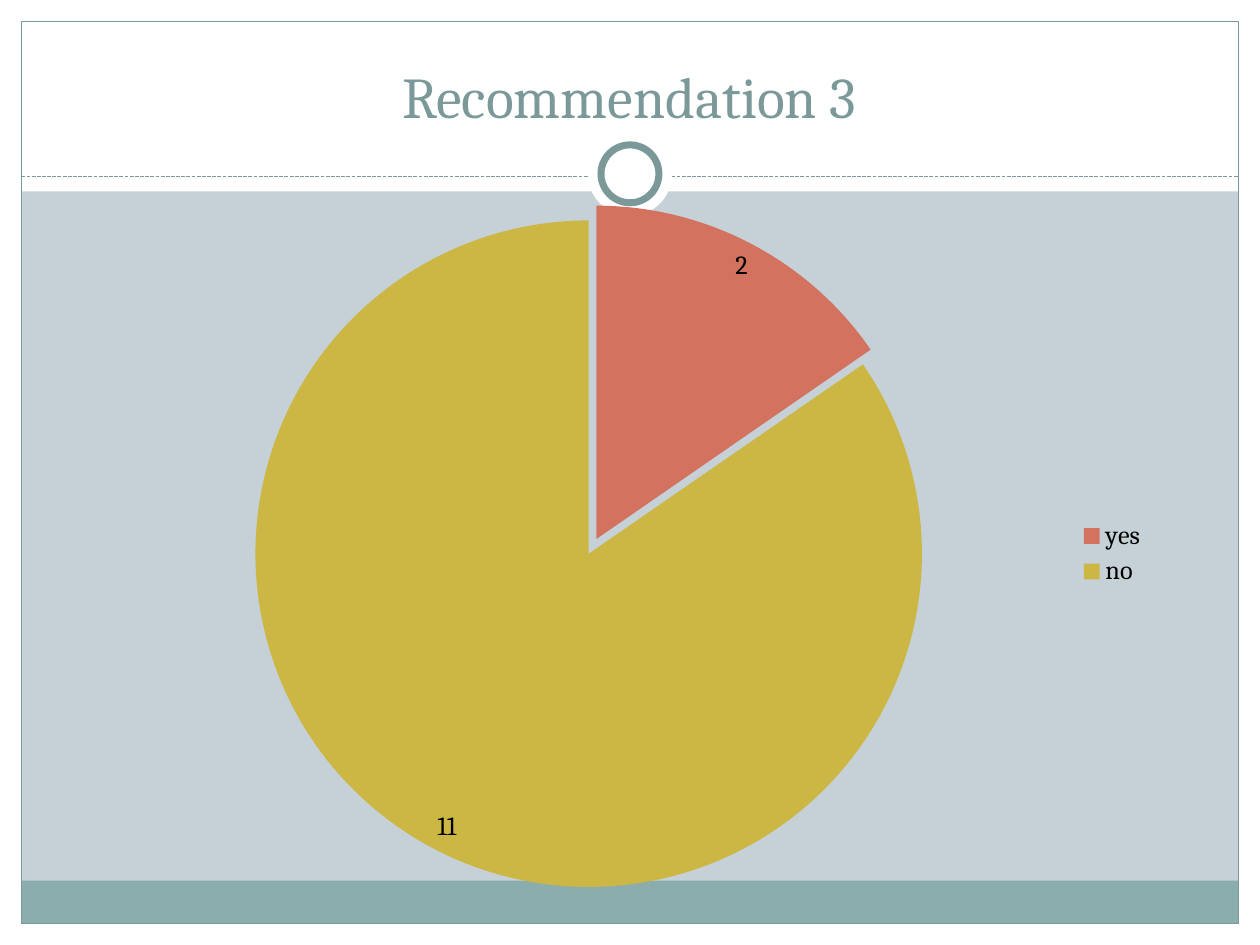
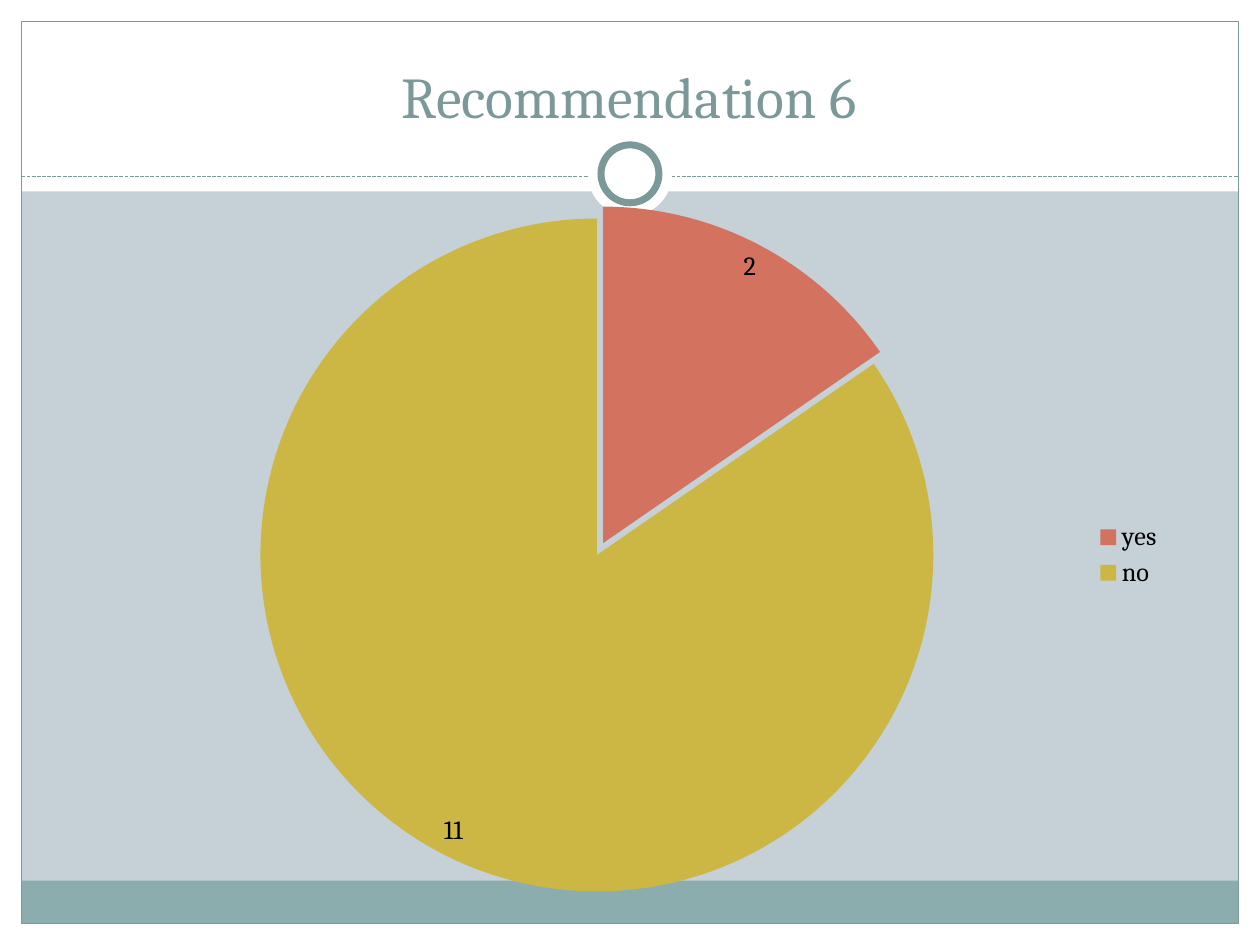
import dataclasses
import typing

import lxml.etree
import pptx
import pptx.chart.data
import pptx.dml.color
import pptx.enum.chart
import pptx.enum.dml
import pptx.enum.shapes
import pptx.enum.text
import pptx.oxml
import pptx.oxml.ns
import pptx.util

RGBColor = pptx.dml.color.RGBColor
Inches = pptx.util.Inches
Shape = pptx.enum.shapes.MSO_SHAPE

# Shared look
WHITE = RGBColor(0xFF, 0xFF, 0xFF)
BLACK = RGBColor(0, 0, 0)
BACKGROUND = RGBColor(0xC5, 0xD1, 0xD7)
TEAL = RGBColor(0x7C, 0x99, 0x9A)
FOOTER_TEAL = RGBColor(0x8C, 0xAD, 0xAE)
SLICE_COLORS = (RGBColor(0xD3, 0x72, 0x5F), RGBColor(0xCC, 0xB7, 0x45))
FONT = "Cambria"

# Page measures in inches
WIDTH, HEIGHT = 10, 7.5
MARGIN = 0.17
HEADER_HEIGHT = 1.52
FOOTER_HEIGHT = 0.34
RULE_Y = 1.4
RING_CENTER_Y = 1.38
INNER_WIDTH = WIDTH - 2 * MARGIN
INNER_HEIGHT = HEIGHT - 2 * MARGIN


@dataclasses.dataclass(frozen=True)
class Box:
    left: float
    top: float
    width: float
    height: float

    def lengths(self) -> tuple:
        return tuple(Inches(value) for value in (self.left, self.top, self.width, self.height))


@dataclasses.dataclass(frozen=True)
class FramePart:
    box: Box
    fill: typing.Optional[RGBColor] = WHITE
    line_width: float = 0
    kind: Shape = Shape.RECTANGLE


@dataclasses.dataclass(frozen=True)
class PieSlide:
    title: str
    chart_box: Box
    explosion: int


def ring_box(diameter: float) -> Box:
    """Square centred on the page, at the height of the ring."""
    return Box((WIDTH - diameter) / 2, RING_CENTER_Y - diameter / 2, diameter, diameter)


TITLE_BOX = Box(0.33, 0.25, 9.33, 0.83)
BANDS = (
    FramePart(Box(0, HEIGHT - MARGIN, WIDTH, MARGIN)),
    FramePart(Box(0, 0, WIDTH, HEADER_HEIGHT)),
    FramePart(Box(0, 0, MARGIN, HEIGHT)),
    FramePart(Box(WIDTH - MARGIN, 0, MARGIN, HEIGHT)),
    FramePart(Box(MARGIN, HEIGHT - MARGIN - FOOTER_HEIGHT, INNER_WIDTH, FOOTER_HEIGHT), FOOTER_TEAL),
    FramePart(Box(MARGIN, MARGIN, INNER_WIDTH, INNER_HEIGHT), None, 0.75),
)
RING = (
    FramePart(ring_box(0.67), kind=Shape.OVAL),
    FramePart(ring_box(0.46), line_width=4, kind=Shape.OVAL),
)

CATEGORIES = ("yes", "no")
VOTES = (2, 11)
PIE_SLIDES = (
    PieSlide("Recommendation 3", Box(0.81, 1.48, 8.39, 5.83), 5),
    PieSlide("Recommendation 6", Box(0.81, 1.49, 8.52, 5.83), 4),
)


def add_part(slide, part: FramePart) -> None:
    shape = slide.shapes.add_shape(part.kind, *part.box.lengths())
    shape.shadow.inherit = False
    if part.fill is None:
        shape.fill.background()
    else:
        shape.fill.solid()
        shape.fill.fore_color.rgb = part.fill
    if part.line_width:
        shape.line.color.rgb = TEAL
        shape.line.width = pptx.util.Pt(part.line_width)
    else:
        shape.line.fill.background()


def add_dashed_rule(slide) -> None:
    rule = slide.shapes.add_connector(
        pptx.enum.shapes.MSO_CONNECTOR.STRAIGHT,
        Inches(MARGIN), Inches(RULE_Y), Inches(WIDTH - MARGIN), Inches(RULE_Y),
    )
    rule.line.color.rgb = TEAL
    rule.line.width = pptx.util.Pt(0.75)
    rule.line.dash_style = pptx.enum.dml.MSO_LINE.SQUARE_DOT
    properties = rule._element.spPr
    lxml.etree.SubElement(properties, pptx.oxml.ns.qn("a:effectLst"))


def add_frame(slide) -> None:
    slide.background.fill.solid()
    slide.background.fill.fore_color.rgb = BACKGROUND
    for part in BANDS:
        add_part(slide, part)
    add_dashed_rule(slide)
    for part in RING:
        add_part(slide, part)


def style_font(font, size: float, color: RGBColor) -> None:
    font.name = FONT
    font.size = pptx.util.Pt(size)
    font.color.rgb = color


def add_title(slide, title: str) -> None:
    text_frame = slide.shapes.add_textbox(*TITLE_BOX.lengths()).text_frame
    text_frame.word_wrap = True
    text_frame.vertical_anchor = pptx.enum.text.MSO_ANCHOR.BOTTOM
    text_frame.text = title
    paragraph = text_frame.paragraphs[0]
    paragraph.alignment = pptx.enum.text.PP_ALIGN.CENTER
    style_font(paragraph.runs[0].font, 33, TEAL)


def explode_first_slice(series, percent: int) -> None:
    point = series._element.find(pptx.oxml.ns.qn("c:dPt"))
    explosion = lxml.etree.Element(pptx.oxml.ns.qn("c:explosion"), val=str(percent))
    point.find(pptx.oxml.ns.qn("c:spPr")).addprevious(explosion)


def add_pie(slide, box: Box, explosion: int) -> None:
    chart_data = pptx.chart.data.CategoryChartData()
    chart_data.categories = CATEGORIES
    chart_data.add_series("Series 1", VOTES)
    chart = slide.shapes.add_chart(
        pptx.enum.chart.XL_CHART_TYPE.PIE, *box.lengths(), chart_data
    ).chart
    style_font(chart.font, 15, BLACK)
    chart.has_title = False

    # Legend
    chart.has_legend = True
    chart.legend.position = pptx.enum.chart.XL_LEGEND_POSITION.RIGHT
    chart.legend.include_in_layout = False

    # Slices and value labels
    plot = chart.plots[0]
    plot.vary_by_categories = True
    series = plot.series[0]
    for index, color in enumerate(SLICE_COLORS):
        slice_format = series.points[index].format
        slice_format.fill.solid()
        slice_format.fill.fore_color.rgb = color
        slice_format.line.fill.background()
    explode_first_slice(series, explosion)
    labels = series.data_labels
    labels.show_value = True
    labels.show_percentage = False
    labels.position = pptx.enum.chart.XL_LABEL_POSITION.INSIDE_END
    style_font(labels.font, 15, BLACK)


def main() -> None:
    presentation = pptx.Presentation()
    presentation.slide_width = Inches(WIDTH)
    presentation.slide_height = Inches(HEIGHT)
    for content in PIE_SLIDES:
        slide = presentation.slides.add_slide(presentation.slide_layouts[6])
        add_frame(slide)
        add_title(slide, content.title)
        add_pie(slide, content.chart_box, content.explosion)
    presentation.save("out.pptx")


if __name__ == "__main__":
    main()
